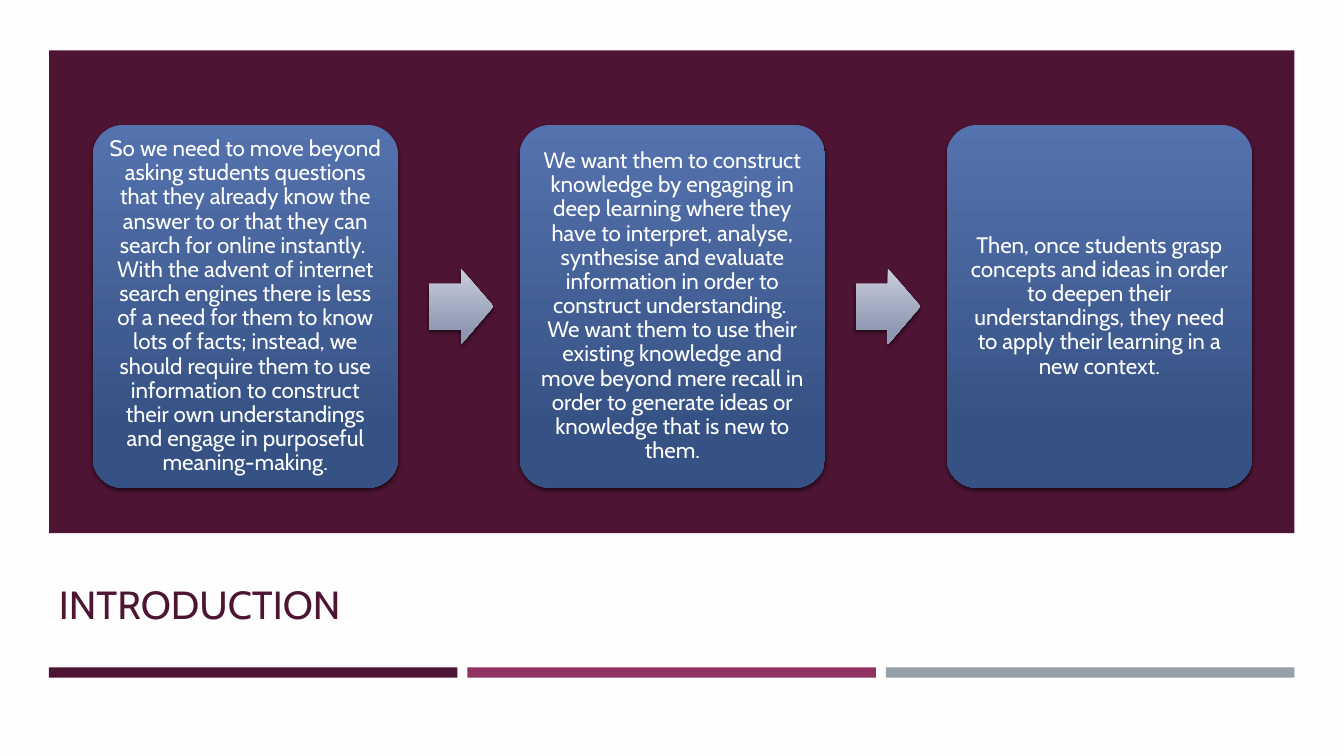
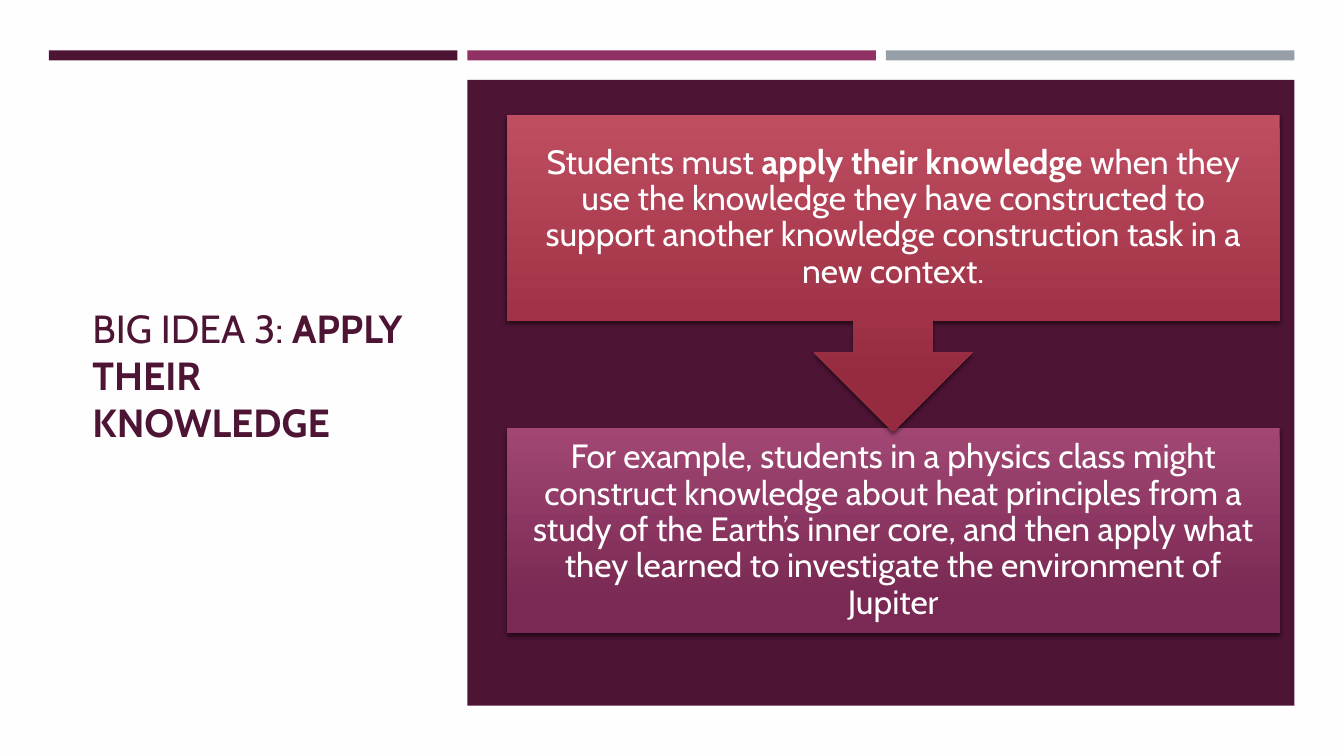
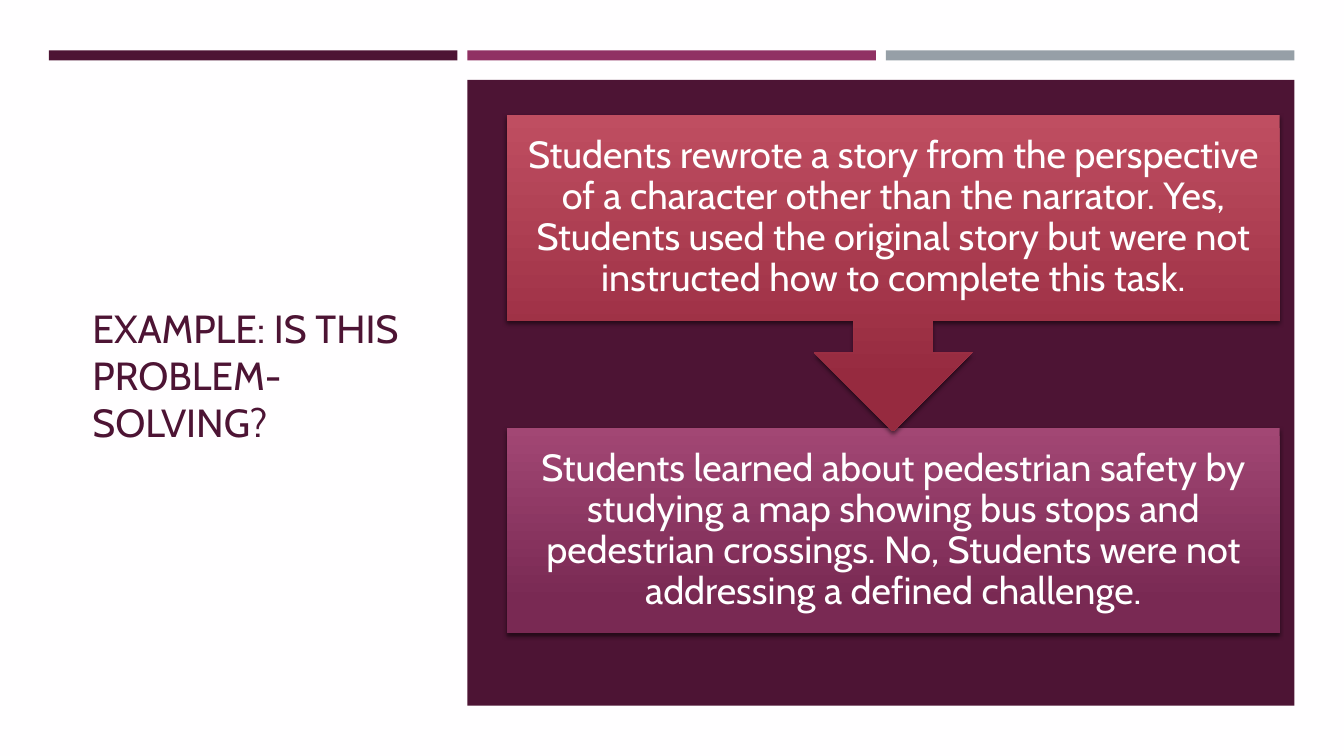
import collections
import lxml.etree
import pptx
import pptx.dml.color
import pptx.enum.shapes
import pptx.enum.text
import pptx.oxml.ns
import pptx.util

Box = collections.namedtuple("Box", "left top width height")
SHAPE = pptx.enum.shapes.MSO_SHAPE
ALIGN = pptx.enum.text.PP_ALIGN

FONT = "Cabin"
PAPER, WHITE = "FFFEFF", "FFFFFF"
PLUM, MAGENTA, GREY = "4D1434", "903163", "969FA7"
BLUE_BLEND = ("5472AE", "365284")
SILVER_BLEND = ("C9CEDC", "8E97B1")
RED_BLEND = ("BF4E61", "962A3F")
PURPLE_BLEND = ("A24774", "792953")

LEFT, CONTENT_WIDTH = 35, 889.6
BAND_GAP, BAND_HEIGHT = 7.2, 7.2
BAND_WIDTH = (CONTENT_WIDTH - 2 * BAND_GAP) / 3
SIDE_LEFT = LEFT + BAND_WIDTH + BAND_GAP

FLOW_TEXTS = [
    "So we need to move beyond asking students questions that they already know "
    "the answer to or that they can search for online instantly.  With the advent "
    "of internet search engines there is less of a need for them to know lots of "
    "facts; instead, we should require them to use information to construct their "
    "own understandings and engage in purposeful meaning-making.",
    "We want them to construct knowledge by engaging in deep learning where they "
    "have to interpret, analyse, synthesise and evaluate information in order to "
    "construct understanding.  We want them to use their existing knowledge and "
    "move beyond mere recall in order to generate ideas or knowledge that is new "
    "to them.",
    "Then, once students grasp concepts and ideas in order to deepen their "
    "understandings, they need to apply their learning in a new context.",
]


def color(code):
    return pptx.dml.color.RGBColor.from_string(code)


def points(box):
    return [pptx.util.Pt(round(length, 2)) for length in box]


def write(shape, runs, size, ink, margins, align=ALIGN.LEFT, spacing=1.0):
    """Fill a shape with one paragraph made of (text, bold) runs."""
    frame = shape.text_frame
    frame.word_wrap = True
    frame.vertical_anchor = pptx.enum.text.MSO_ANCHOR.MIDDLE
    across, down = map(pptx.util.Pt, margins)
    frame.margin_left = frame.margin_right = across
    frame.margin_top = frame.margin_bottom = down
    para = frame.paragraphs[0]
    para.alignment = align
    para.line_spacing = spacing
    for text, bold in runs:
        span = para.add_run()
        span.text = text
        span.font.name = FONT
        span.font.size = pptx.util.Pt(size)
        span.font.bold = bold
        span.font.color.rgb = color(ink)


def add_flat(page, box, fill):
    shape = page.shapes.add_shape(SHAPE.RECTANGLE, *points(box))
    shape.shadow.inherit = False
    shape.fill.solid()
    shape.fill.fore_color.rgb = color(fill)
    shape.line.fill.background()


def add_raised(page, kind, box, blend, adjustments=()):
    """Add a shape with a downward gradient and a soft shadow below it."""
    shape = page.shapes.add_shape(kind, *points(box))
    for index, value in enumerate(adjustments):
        shape.adjustments[index] = value
    shape.fill.gradient()
    shape.fill.gradient_angle = 270
    for stop, code, position in zip(shape.fill.gradient_stops, blend, (0, 0.84)):
        stop.color.rgb = color(code)
        stop.position = position
    shape.line.fill.background()
    shape.shadow.inherit = False
    qn = pptx.oxml.ns.qn
    effects = shape._element.spPr.find(qn("a:effectLst"))
    shadow = lxml.etree.SubElement(
        effects, qn("a:outerShdw"), blurRad=str(pptx.util.Pt(3)),
        dist=str(pptx.util.Pt(2)), dir="5400000", algn="ctr", rotWithShape="0")
    black = lxml.etree.SubElement(shadow, qn("a:srgbClr"), val="000000")
    lxml.etree.SubElement(black, qn("a:alpha"), val="55000")
    return shape


def add_page(deck, band_top, panel, title_box, title_runs):
    """Add a slide with the shared paper, title, bands and plum panel."""
    page = deck.slides.add_slide(deck.slide_layouts[6])
    page.background.fill.solid()
    page.background.fill.fore_color.rgb = color(PAPER)
    title = page.shapes.add_textbox(*points(title_box))
    write(title, title_runs, 28, PLUM, (7.2, 3.6))
    for index, fill in enumerate((PLUM, MAGENTA, GREY)):
        left = LEFT + index * (BAND_WIDTH + BAND_GAP)
        add_flat(page, Box(left, band_top, BAND_WIDTH, BAND_HEIGHT), fill)
    add_flat(page, panel, PLUM)
    return page


def add_flow(page, panel, texts):
    """Place cards in a row across the panel, with an arrow in each gap."""
    width, height, gap = 218.2, 259.2, 86.8
    arrow_width, arrow_height = 46.2, 54
    top = panel.top + 53.3
    for index, text in enumerate(texts):
        left = panel.left + 31.2 + index * (width + gap)
        if index:
            arrow = Box(left - gap + width / 10, top + (height - arrow_height) / 2,
                        arrow_width, arrow_height)
            add_raised(page, SHAPE.RIGHT_ARROW, arrow, SILVER_BLEND, (0.6, 0.5))
        card = add_raised(page, SHAPE.ROUNDED_RECTANGLE,
                          Box(left, top, width, height), BLUE_BLEND, (0.1,))
        write(card, [(text, False)], 16, WHITE, (5, 5), ALIGN.CENTER, 0.9)


def add_steps(page, panel, upper_runs, lower_runs, size):
    """Place a callout in the panel that points down to a second box."""
    left, top, width = panel.left + 28, panel.top + 25.2, 552.2
    margins = (0.56 * size, 0.56 * size)
    lower = add_raised(page, SHAPE.RECTANGLE,
                       Box(left, top + 223.4, width, 146.9), PURPLE_BLEND)
    upper = add_raised(page, SHAPE.DOWN_ARROW_CALLOUT, Box(left, top, width, 226),
                       RED_BLEND, (0.25, 0.25, 0.25, 0.65))
    for shape, runs in ((lower, lower_runs), (upper, upper_runs)):
        write(shape, runs, size, WHITE, margins, ALIGN.CENTER, 0.9)


def flow_slide(deck, title, texts):
    panel = Box(LEFT, 36, CONTENT_WIDTH, 344.8)
    title_box = Box(LEFT, 394, CONTENT_WIDTH, 75)
    page = add_page(deck, 476.8, panel, title_box, [(title, False)])
    add_flow(page, panel, texts)


def steps_slide(deck, title_runs, upper_runs, lower_runs, size):
    panel = Box(SIDE_LEFT, 57, LEFT + CONTENT_WIDTH - SIDE_LEFT, 447)
    title_box = Box(59, 82, 240.5, 371)
    page = add_page(deck, 36, panel, title_box, title_runs)
    add_steps(page, panel, upper_runs, lower_runs, size)


def main():
    deck = pptx.Presentation()
    deck.slide_width, deck.slide_height = pptx.util.Pt(960), pptx.util.Pt(540)
    flow_slide(deck, "INTRODUCTION", FLOW_TEXTS)
    steps_slide(
        deck,
        [("BIG IDEA 3: ", False), ("APPLY THEIR KNOWLEDGE", True)],
        [("Students must ", False), ("apply their knowledge", True),
         (" when they use the knowledge they have constructed to support another "
          "knowledge construction task in a new context.", False)],
        [("For example, students in a physics class might construct knowledge "
          "about heat principles from a study of the Earth’s inner core, and then "
          "apply what they learned to investigate the environment of Jupiter", False)],
        24)
    steps_slide(
        deck,
        [("EXAMPLE: IS THIS PROBLEM-SOLVING?", False)],
        [("Students rewrote a story from the perspective of a character other than "
          "the narrator. Yes, Students used the original story but were not "
          "instructed how to complete this task.", False)],
        [("Students learned about pedestrian safety by studying a map showing bus "
          "stops and pedestrian crossings. No, Students were not addressing a "
          "defined challenge.", False)],
        27)
    deck.save("out.pptx")


if __name__ == "__main__":
    main()
